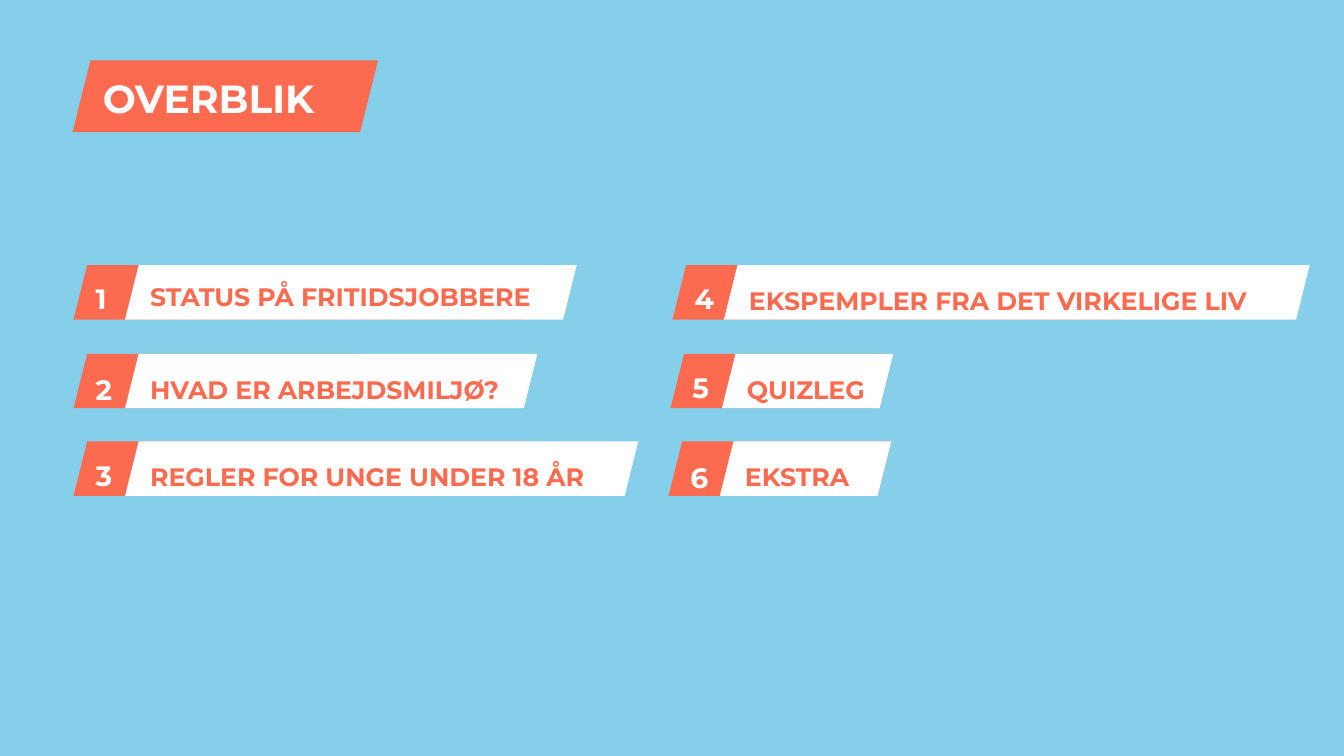
"""Builds the overview slide with six numbered topics."""
import pptx
import pptx.dml.color
import pptx.enum.shapes
import pptx.enum.text
import pptx.util

Inches = pptx.util.Inches
SKY, CORAL, WHITE = "85CFEA", "FC6B4F", "FFFFFF"
BAR = 0.54

# left, top, band width, label width, text width, number lift, text lift, text
TOPICS = [
    (0.73, 2.63, 4.6, 4.48, 5.11, 0.05, 0.04, "STATUS PÅ FRITIDSJOBBERE"),
    (0.73, 3.51, 2.8, 4.09, 4.3, 0.03, 0, "HVAD ER ARBEJDSMILJØ?"),
    (0.73, 4.38, 4.6, 5.09, 5, 0.05, 0, "REGLER FOR UNGE UNDER 18 ÅR"),
    (6.67, 2.63, 4.6, 5.81, 5.66, 0.05, 0, "EKSPEMPLER FRA DET VIRKELIGE LIV"),
    (6.65, 3.51, 2.15, 1.7, 5, 0.05, 0, "QUIZLEG"),
    (6.63, 4.38, 2.21, 1.7, 1.54, 0.03, 0, "EKSTRA"),
]


def paint(fill, hue):
    """Fill with one solid colour."""
    fill.solid()
    fill.fore_color.rgb = pptx.dml.color.RGBColor.from_string(hue)


def band(slide, left, top, width, height, hue):
    """Draw a slanted band."""
    shape = slide.shapes.add_shape(
        pptx.enum.shapes.MSO_SHAPE.PARALLELOGRAM,
        Inches(left), Inches(top), Inches(width), Inches(height))
    shape.shadow.inherit = False
    paint(shape.fill, hue)
    shape.line.fill.background()


def write(frame, text, size, hue, space):
    """Write one bold line into a text frame."""
    frame.word_wrap = True
    frame.auto_size = pptx.enum.text.MSO_AUTO_SIZE.NONE
    line = frame.paragraphs[0]
    line.alignment = pptx.enum.text.PP_ALIGN.LEFT
    line.line_spacing = space
    run = line.add_run()
    run.text = text
    run.font.name = "Montserrat"
    run.font.size = pptx.util.Pt(size)
    run.font.bold = True
    paint(run.font.fill, hue)


def label(slide, left, top, width, text, size, hue):
    """Place a line of text over a bar."""
    box = slide.shapes.add_textbox(
        Inches(left), Inches(top), Inches(width), Inches(BAR))
    write(box.text_frame, text, size, hue, 1.5)


def topic(slide, number, item):
    """Draw a numbered topic bar."""
    left, top, under, over, width, rise, lift, text = item
    band(slide, left, top, under, BAR, CORAL)
    band(slide, left + 0.51, top, over, BAR, WHITE)
    label(slide, left + 0.66, top - lift, width, text, 18, CORAL)
    label(slide, left + 0.12, top - rise, 0.47, str(number), 20, WHITE)


def heading(slide, text):
    """Set the title on its slanted band."""
    band(slide, 0.72, 0.6, 3.03, 0.71, CORAL)
    title = slide.shapes.title
    title.left, title.top = Inches(0.92), Inches(0.6)
    title.width, title.height = Inches(2.61), Inches(0.79)
    title.text_frame.vertical_anchor = pptx.enum.text.MSO_ANCHOR.MIDDLE
    write(title.text_frame, text, 28, WHITE, 0.9)
    title.element.getparent().append(title.element)


def main():
    """Build and save the slide."""
    deck = pptx.Presentation()
    deck.slide_width, deck.slide_height = Inches(13.33), Inches(7.5)
    slide = deck.slides.add_slide(deck.slide_layouts[5])
    paint(slide.background.fill, SKY)
    for number, item in enumerate(TOPICS, 1):
        topic(slide, number, item)
    heading(slide, "OVERBLIK")
    deck.save("out.pptx")


if __name__ == "__main__":
    main()
